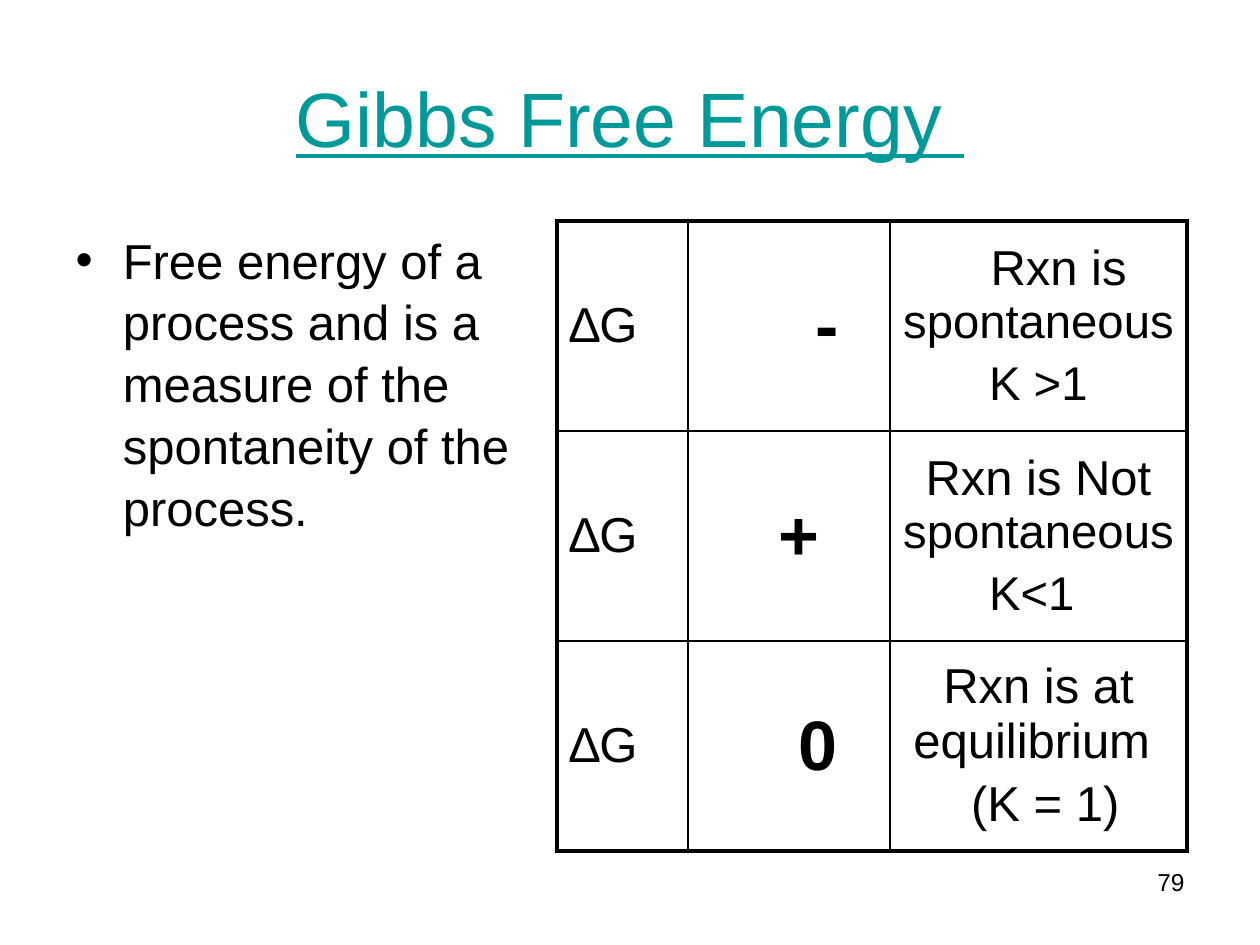
import dataclasses

import lxml.etree
import pptx
import pptx.dml.color
import pptx.enum.text
import pptx.oxml.ns
import pptx.util

ALIGN = pptx.enum.text.PP_ALIGN
ANCHOR = pptx.enum.text.MSO_ANCHOR


@dataclasses.dataclass(frozen=True)
class Theme:
    font: str = "Arial"
    ink: str = "000000"
    accent: str = "009999"
    title: int = 44
    body: int = 28
    tight: int = 27
    sign: int = 40
    number: int = 14
    outer_line: float = 2.25
    inner_line: float = 1
    para_gap: int = 5


THEME = Theme()
COLUMNS = [131, 202, 297]
ROW_HEIGHT = 210

# Sign, its left indent in points, first-line indent of the outcome,
# outcome paragraphs as (text, size) runs.
CASES = [
    ("-", 44, 23, [[("Rxn is ", THEME.body), ("spontaneous", THEME.tight)],
                   [(" K >1 ", THEME.tight)]]),
    ("+", 11, 0, [[("Rxn is Not ", THEME.body), ("spontaneous", THEME.tight)],
                  [("K<1 ", THEME.tight)]]),
    ("0", 33, 0, [[("Rxn is at equilibrium ", THEME.body)],
                  [(" (K = 1)", THEME.body)]]),
]


def px(count):
    return pptx.util.Emu(round(count * 914400 / 126))


def place(shape, left, top, width, height):
    shape.left, shape.top = px(left), px(top)
    shape.width, shape.height = px(width), px(height)


def add_span(para, text, size, color=THEME.ink, bold=False, underline=False):
    span = para.add_run()
    span.text = text
    font = span.font
    font.name, font.size = THEME.font, pptx.util.Pt(size)
    font.bold, font.underline = bold, underline
    font.color.rgb = pptx.dml.color.RGBColor.from_string(color)


def indent(para, left=0, first=0):
    """Indent a paragraph, and its first line further, in points."""
    properties = para._p.get_or_add_pPr()
    properties.set("marL", str(pptx.util.Pt(left)))
    properties.set("indent", str(pptx.util.Pt(first)))


def border(cell, side, width):
    line = lxml.etree.SubElement(
        cell._tc.get_or_add_tcPr(), pptx.oxml.ns.qn("a:ln" + side),
        w=str(pptx.util.Pt(width)))
    fill = lxml.etree.SubElement(line, pptx.oxml.ns.qn("a:solidFill"))
    lxml.etree.SubElement(fill, pptx.oxml.ns.qn("a:srgbClr"), val=THEME.ink)


def format_cell(cell, row, column):
    cell.vertical_anchor = ANCHOR.MIDDLE
    on_edge = {"L": column == 0, "R": column == len(COLUMNS) - 1,
               "T": row == 0, "B": row == len(CASES) - 1}
    for side, outer in on_edge.items():
        border(cell, side, THEME.outer_line if outer else THEME.inner_line)
    cell.fill.background()


def fill_cell(cell, paragraphs, align, left=0, first=0, bold=False):
    frame = cell.text_frame
    for index, spans in enumerate(paragraphs):
        para = frame.add_paragraph() if index else frame.paragraphs[0]
        para.alignment = align
        para.space_before = pptx.util.Pt(THEME.para_gap)
        indent(para, left, 0 if index else first)
        for text, size in spans:
            add_span(para, text, size, bold=bold)


def add_title(page):
    box = page.shapes.title
    place(box, 63, 38, 1134, 157)
    box.text_frame.vertical_anchor = ANCHOR.MIDDLE
    para = box.text_frame.paragraphs[0]
    para.alignment = ALIGN.CENTER
    add_span(para, "Gibbs Free Energy ", THEME.title, THEME.accent, underline=True)


def add_body(page):
    box = page.placeholders[1]
    place(box, 63, 221, 557, 624)
    box.text_frame.auto_size = pptx.enum.text.MSO_AUTO_SIZE.NONE
    para = box.text_frame.paragraphs[0]
    para.line_spacing = 1.05
    add_span(para, "Free energy of a process and is a measure of the "
                   "spontaneity of the process.", THEME.body)


def add_cases(page):
    frame = page.shapes.add_table(
        len(CASES), len(COLUMNS), px(557), px(221),
        px(sum(COLUMNS)), px(ROW_HEIGHT * len(CASES)))
    table = frame.table
    table.first_row = table.horz_banding = False
    for column, width in zip(table.columns, COLUMNS):
        column.width = px(width)
    for row, (sign, shift, first, outcome) in enumerate(CASES):
        table.rows[row].height = px(ROW_HEIGHT)
        cells = [table.cell(row, column) for column in range(len(COLUMNS))]
        for column, cell in enumerate(cells):
            format_cell(cell, row, column)
        fill_cell(cells[0], [[("∆G", THEME.body)]], ALIGN.LEFT)
        fill_cell(cells[1], [[(sign, THEME.sign)]], ALIGN.CENTER,
                  left=shift, bold=True)
        fill_cell(cells[2], outcome, ALIGN.CENTER, first=first)


def add_page_number(page):
    box = page.shapes.add_textbox(px(903), px(861), px(294), px(66))
    box.text_frame.word_wrap = True
    para = box.text_frame.paragraphs[0]
    para.alignment = ALIGN.RIGHT
    add_span(para, "79", THEME.number)


def main():
    deck = pptx.Presentation()
    deck.slide_width, deck.slide_height = px(1260), px(945)
    page = deck.slides.add_slide(deck.slide_layouts[1])
    add_title(page)
    add_body(page)
    add_cases(page)
    add_page_number(page)
    deck.save("out.pptx")


if __name__ == "__main__":
    main()
